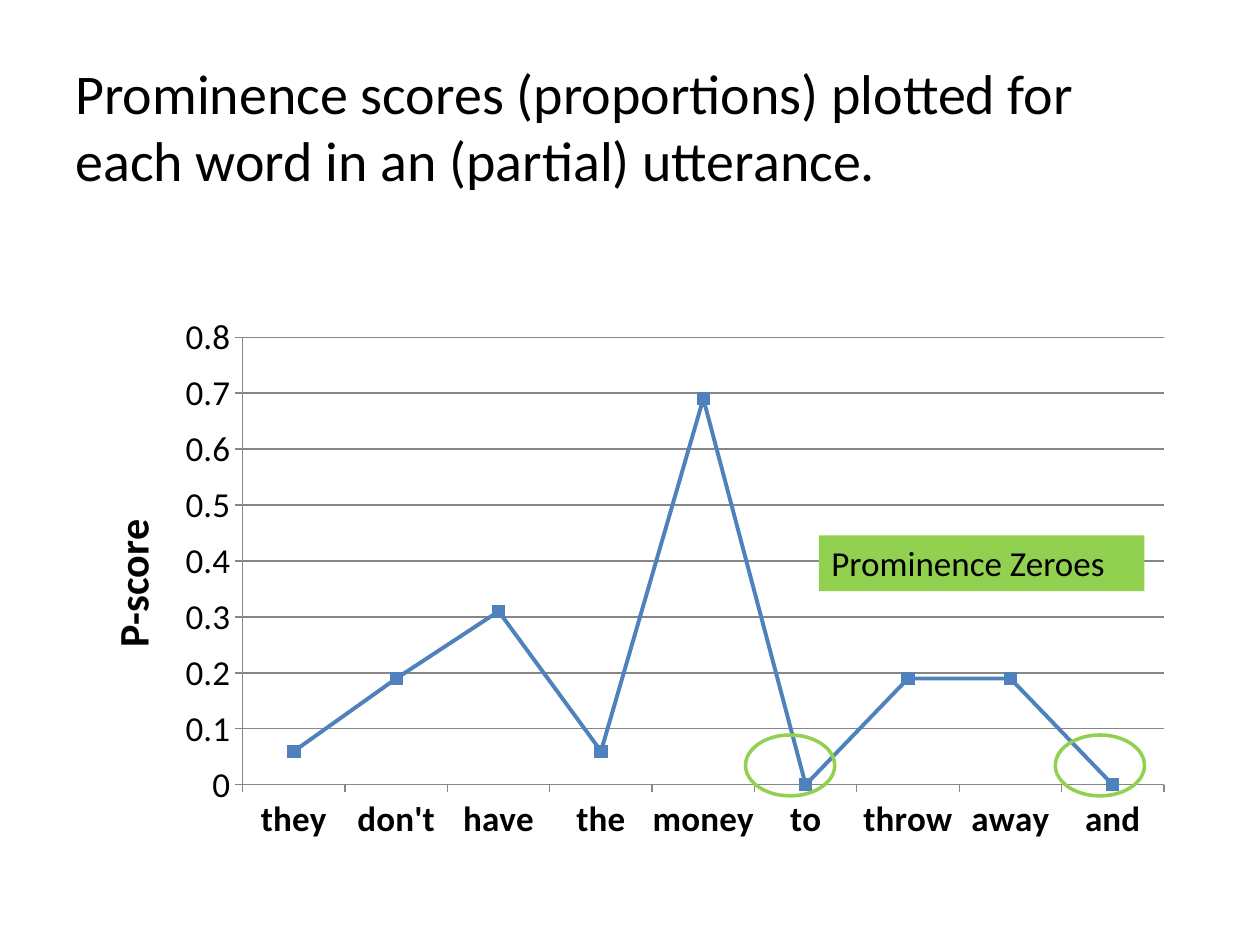
from dataclasses import dataclass

from lxml import etree
from pptx import Presentation
from pptx.chart.data import CategoryChartData
from pptx.dml.color import RGBColor
from pptx.enum.chart import XL_CHART_TYPE as Chart, XL_MARKER_STYLE as Marker, XL_TICK_MARK as Tick
from pptx.enum.shapes import MSO_SHAPE as Shape
from pptx.enum.text import MSO_ANCHOR as Anchor, PP_ALIGN as Align
from pptx.oxml.ns import qn
from pptx.util import Inches, Pt


@dataclass(frozen=True)
class Theme:
    font: str = "Calibri"
    ink: RGBColor = RGBColor(0, 0, 0)
    line: RGBColor = RGBColor(0x4F, 0x81, 0xBD)
    accent: RGBColor = RGBColor(0x92, 0xD0, 0x50)
    grid: RGBColor = RGBColor(0x86, 0x86, 0x86)
    title: int = 32
    axis_title: int = 24
    body: int = 20


class Deck:
    """Places elements on a 12 by 9 grid, each cell 1/12 of the slide width."""
    COLS, ROWS = 12, 9

    def __init__(self, prs, theme):
        self.prs, self.theme = prs, theme
        self.s = prs.slides.add_slide(prs.slide_layouts[6])

    def box(self, col, row, cols, rows):
        dx, dy = self.prs.slide_width / self.COLS, self.prs.slide_height / self.ROWS
        return [round(v) for v in (col * dx, row * dy, cols * dx, rows * dy)]

    def style(self, font, size, bold=False):
        font.name, font.size, font.bold = self.theme.font, Pt(size), bold
        font.color.rgb = self.theme.ink

    def set_text(self, sp, text, size):
        tf = sp.text_frame
        tf.word_wrap, tf.vertical_anchor = True, Anchor.TOP
        p = tf.paragraphs[0]
        p.text, p.alignment = text, Align.LEFT
        self.style(p.font, size)

    def title(self, text, *cells):
        self.set_text(self.s.shapes.add_textbox(*self.box(*cells)), text, self.theme.title)

    def label(self, text, *cells):
        sp = self.s.shapes.add_shape(Shape.RECTANGLE, *self.box(*cells))
        sp.shadow.inherit = False
        sp.fill.solid()
        sp.fill.fore_color.rgb = self.theme.accent
        sp.line.fill.background()
        self.set_text(sp, text, self.theme.body)

    def ring(self, *cells):
        sp = self.s.shapes.add_shape(Shape.OVAL, *self.box(*cells))
        sp.shadow.inherit = False
        sp.fill.background()
        sp.line.color.rgb, sp.line.width = self.theme.accent, Pt(2)

    @staticmethod
    def layout(parent, after, **settings):
        """Fix the place of a chart part, in shares of the chart's size."""
        for old in parent.findall(qn("c:layout")):
            parent.remove(old)
        layout = etree.Element(qn("c:layout"))
        manual = etree.SubElement(layout, qn("c:manualLayout"))
        for tag, value in settings.items():
            etree.SubElement(manual, qn("c:" + tag)).set("val", str(value))
        if after is None:
            parent.insert(0, layout)
        else:
            after.addnext(layout)

    def line_chart(self, points, axis_title, *cells):
        t = self.theme
        data = CategoryChartData()
        data.categories = [word for word, _ in points]
        data.add_series("Series 1", [score for _, score in points])
        chart = self.s.shapes.add_chart(Chart.LINE_MARKERS, *self.box(*cells), data).chart
        chart.has_legend = chart.has_title = False
        self.style(chart.font, t.body)

        # Axes
        words, scores = chart.category_axis, chart.value_axis
        for axis in (words, scores):
            axis.major_tick_mark, axis.minor_tick_mark = Tick.OUTSIDE, Tick.NONE
            axis.format.line.color.rgb, axis.format.line.width = t.grid, Pt(0.75)
        self.style(words.tick_labels.font, t.body, bold=True)
        scores.minimum_scale, scores.maximum_scale, scores.major_unit = 0, 0.8, 0.1
        scores.has_major_gridlines = True
        grid = scores.major_gridlines.format.line
        grid.color.rgb, grid.width = t.grid, Pt(0.75)
        tf = scores.axis_title.text_frame
        tf.text = axis_title
        self.style(tf.paragraphs[0].font, t.axis_title, bold=True)

        # Series
        plot = chart.plots[0]
        plot.vary_by_categories = False
        series = plot.series[0]
        series.smooth = False
        series.format.line.color.rgb, series.format.line.width = t.line, Pt(2.25)
        marker = series.marker
        marker.style, marker.size = Marker.SQUARE, 7
        marker.format.fill.solid()
        marker.format.fill.fore_color.rgb = marker.format.line.color.rgb = t.line

        # Plot area and axis title positions
        area = chart.element.find(".//" + qn("c:plotArea"))
        self.layout(area, None, layoutTarget="inner", xMode="edge", yMode="edge",
                    x=0.16, y=0.06, w=0.82, h=0.82)
        title = area.find(".//" + qn("c:title"))
        self.layout(title, title.find(qn("c:tx")), xMode="edge", yMode="edge", x=0.03, y=0.38)


SCORES = [("they", 0.06), ("don't", 0.19), ("have", 0.31), ("the", 0.06), ("money", 0.69),
          ("to", 0), ("throw", 0.19), ("away", 0.19), ("and", 0)]


def main():
    prs = Presentation()
    prs.slide_width, prs.slide_height = Inches(10), Inches(7.5)
    deck = Deck(prs, Theme())

    # Prominence chart
    deck.line_chart(SCORES, "P-score", 0.6, 2.9, 10.7, 5.2)

    # Zero scores called out
    deck.label("Prominence Zeroes", 7.8, 5.1, 3.1, 0.53)
    for col in (7.1, 10.05):
        deck.ring(col, 7, 0.85, 0.58)

    # Heading
    deck.title("Prominence scores (proportions) plotted for each word in an (partial) utterance.",
               0.6, 0.5, 10.8, 1.7)

    prs.save("out.pptx")


if __name__ == "__main__":
    main()
